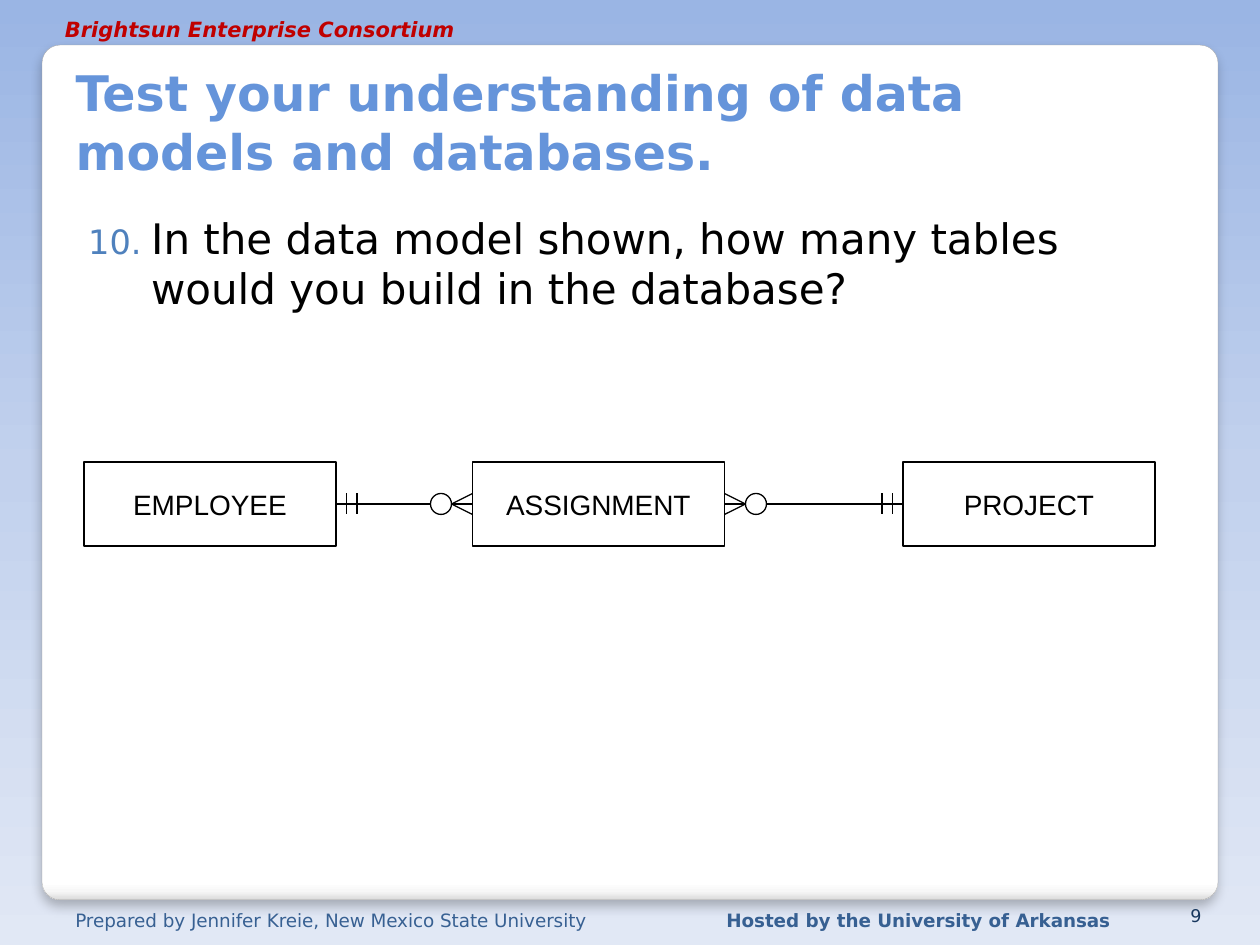
import dataclasses

import lxml.etree
import pptx
import pptx.dml.color
import pptx.enum.shapes
import pptx.enum.text
import pptx.oxml.ns
import pptx.util

PX = 7620
COLORS = {
    "black": "000000",
    "title": "6594DA",
    "footer": "376092",
    "heading": "C00000",
    "page": "17375E",
    "number": "4F81BD",
    "card_line": "A4A4A4",
}
BACKGROUND_STOPS = [(0, "9AB5E4"), (50, "C2D1ED"), (100, "E1E8F5")]
CARD_STOPS = [(0, "FFFFFF"), (98, "FFFFFF"), (99, "F7F7F7"), (100, "DADADA")]
SANS = "DejaVu Sans"
ALIGN = pptx.enum.text.PP_ALIGN
ANCHOR = pptx.enum.text.MSO_ANCHOR
SHAPE = pptx.enum.shapes.MSO_SHAPE
AXIS_Y = 480
UNIT = 10


@dataclasses.dataclass(frozen=True)
class Style:
    size: float
    color: str
    font: str = SANS
    bold: bool = False
    italic: bool = False
    align: ALIGN = ALIGN.LEFT
    anchor: ANCHOR = ANCHOR.TOP


@dataclasses.dataclass(frozen=True)
class Label:
    text: str
    box: tuple[int, int, int, int]
    style: Style


@dataclasses.dataclass(frozen=True)
class Entity:
    name: str
    left: int


@dataclasses.dataclass(frozen=True)
class Relationship:
    one_x: int
    many_x: int
    stem_x: int
    stub_x: int


LABELS = [
    Label("Prepared by Jennifer Kreie, New Mexico State University",
          (60, 860, 535, 28), Style(10.5, "footer")),
    Label("Hosted by the University of Arkansas",
          (680, 860, 400, 28), Style(10.5, "footer", bold=True)),
    Label("Brightsun Enterprise Consortium",
          (50, 10, 400, 28), Style(12, "heading", bold=True, italic=True)),
    Label("9", (1096, 860, 60, 28),
          Style(10, "page", align=ALIGN.RIGHT, anchor=ANCHOR.BOTTOM)),
]
TITLE = Label("Test your understanding of data models and databases.",
              (60, 40, 1074, 138),
              Style(28, "title", bold=True, anchor=ANCHOR.BOTTOM))
QUESTION = Label("In the data model shown, how many tables would you build in the database?",
                 (60, 190, 1070, 430), Style(24, "black"))
ENTITY_STYLE = Style(16, "black", "Arial", align=ALIGN.CENTER, anchor=ANCHOR.MIDDLE)
ENTITIES = [Entity("EMPLOYEE", 80), Entity("PROJECT", 860), Entity("ASSIGNMENT", 450)]
RELATIONSHIPS = [
    Relationship(one_x=320, many_x=450, stem_x=340, stub_x=320),
    Relationship(one_x=860, many_x=690, stem_x=860, stub_x=850),
]


def rgb(name: str) -> pptx.dml.color.RGBColor:
    return pptx.dml.color.RGBColor.from_string(COLORS[name])


def scaled(*lengths: int) -> list[int]:
    return [length * PX for length in lengths]


def add_node(parent, tag: str, **attributes: str):
    node = lxml.etree.SubElement(parent, pptx.oxml.ns.qn(tag))
    for name, value in attributes.items():
        node.set(name, value)
    return node


def set_gradient(fill, element, stops: list[tuple[int, str]]) -> None:
    fill.gradient()
    fill.gradient_angle = 270
    stop_list = element.find(".//" + pptx.oxml.ns.qn("a:gsLst"))
    for old_stop in list(stop_list):
        stop_list.remove(old_stop)
    for position, color in stops:
        stop = add_node(stop_list, "a:gs", pos=str(position * 1000))
        add_node(stop, "a:srgbClr", val=color)


def write_text(shape, text: str, style: Style, wrap: bool = True) -> None:
    frame = shape.text_frame
    frame.text = text
    frame.word_wrap = wrap
    frame.auto_size = pptx.enum.text.MSO_AUTO_SIZE.NONE
    frame.vertical_anchor = style.anchor
    paragraph = frame.paragraphs[0]
    paragraph.alignment = style.align
    font = paragraph.runs[0].font
    font.name = style.font
    font.size = pptx.util.Pt(style.size)
    font.bold = style.bold
    font.italic = style.italic
    font.color.rgb = rgb(style.color)


def add_label(slide, label: Label):
    shape = slide.shapes.add_textbox(*scaled(*label.box))
    write_text(shape, label.text, label.style)
    return shape


def add_card(slide) -> None:
    card = slide.shapes.add_shape(SHAPE.ROUNDED_RECTANGLE, *scaled(40, 43, 1120, 814))
    card.adjustments[0] = 0.021
    set_gradient(card.fill, card.element, CARD_STOPS)
    card.line.color.rgb = rgb("card_line")
    card.line.width = pptx.util.Pt(0.16)
    card.shadow.inherit = False
    effects = card.element.spPr.find(pptx.oxml.ns.qn("a:effectLst"))
    shadow = add_node(effects, "a:outerShdw", blurRad=str(pptx.util.Pt(6)),
                      dist=str(pptx.util.Pt(4)), dir="5400000", algn="t", rotWithShape="0")
    color = add_node(shadow, "a:srgbClr", val=COLORS["black"])
    add_node(color, "a:alpha", val="25000")
    slide.shapes.title.element.addprevious(card.element)


def add_title(slide) -> None:
    title = slide.shapes.title
    title.left, title.top, title.width, title.height = scaled(*TITLE.box)
    write_text(title, TITLE.text, TITLE.style)


def add_question(slide) -> None:
    frame = add_label(slide, QUESTION).text_frame
    frame.margin_left, frame.margin_top = scaled(24, 12)
    paragraph = frame.paragraphs[0]
    paragraph.space_before = pptx.util.Pt(2.5)
    properties = paragraph.runs[0].font and paragraph._p.get_or_add_pPr()
    properties.set("marL", str(60 * PX))
    properties.set("indent", str(-60 * PX))
    add_node(add_node(properties, "a:buClr"), "a:srgbClr", val=COLORS["number"])
    add_node(properties, "a:buSzPct", val="80000")
    add_node(properties, "a:buFont", typeface=SANS)
    add_node(properties, "a:buAutoNum", type="arabicPeriod", startAt="10")


def add_outline(group, kind: SHAPE, box: tuple[int, int, int, int]):
    shape = group.shapes.add_shape(kind, *scaled(*box))
    shape.shadow.inherit = False
    shape.fill.background()
    shape.line.color.rgb = rgb("black")
    shape.line.width = pptx.util.Pt(0.75)
    return shape


def add_line(group, start_x: int, start_y: int, end_x: int, end_y: int) -> None:
    line = group.shapes.add_connector(pptx.enum.shapes.MSO_CONNECTOR.STRAIGHT,
                                      *scaled(start_x, start_y, end_x, end_y))
    line.line.color.rgb = rgb("black")
    line.line.width = pptx.util.Pt(0.75)
    add_node(line.element.spPr, "a:effectLst")


def add_entity(group, entity: Entity) -> None:
    shape = add_outline(group, SHAPE.RECTANGLE, (entity.left, AXIS_Y - 40, 240, 80))
    write_text(shape, entity.name, ENTITY_STYLE, wrap=False)


def add_relationship(group, link: Relationship) -> None:
    step = UNIT if link.many_x > link.one_x else -UNIT
    add_line(group, link.stem_x, AXIS_Y, link.many_x - 4 * step, AXIS_Y)
    circle_x = link.many_x - 3 * step
    add_outline(group, SHAPE.OVAL, (circle_x - UNIT, AXIS_Y - UNIT, 2 * UNIT, 2 * UNIT))
    for offset in (0, UNIT, -UNIT):
        add_line(group, link.many_x - 2 * step, AXIS_Y, link.many_x, AXIS_Y + offset)
    for bar_x in (link.one_x + step, link.one_x + 2 * step):
        add_line(group, bar_x, AXIS_Y - UNIT, bar_x, AXIS_Y + UNIT)
    add_line(group, link.stub_x, AXIS_Y, link.stub_x + 2 * step, AXIS_Y)


def main() -> None:
    presentation = pptx.Presentation()
    presentation.slide_width, presentation.slide_height = scaled(1200, 900)
    slide = presentation.slides.add_slide(presentation.slide_layouts[5])
    set_gradient(slide.background.fill, slide.element, BACKGROUND_STOPS)
    add_card(slide)
    add_title(slide)
    for label in LABELS:
        add_label(slide, label)
    add_question(slide)
    diagram = slide.shapes.add_group_shape()
    for entity in ENTITIES:
        add_entity(diagram, entity)
    for link in RELATIONSHIPS:
        add_relationship(diagram, link)
    presentation.save("out.pptx")


if __name__ == "__main__":
    main()
